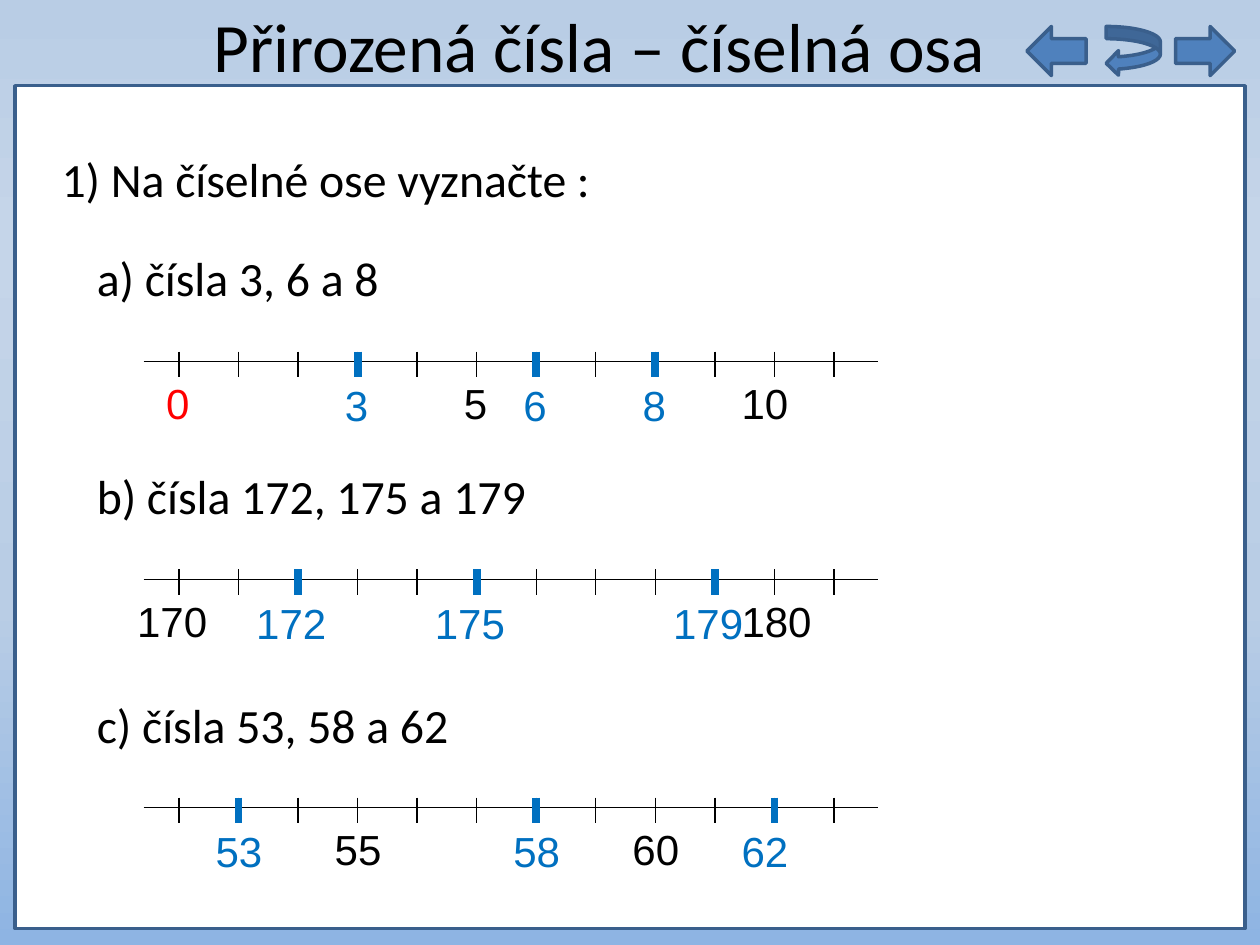
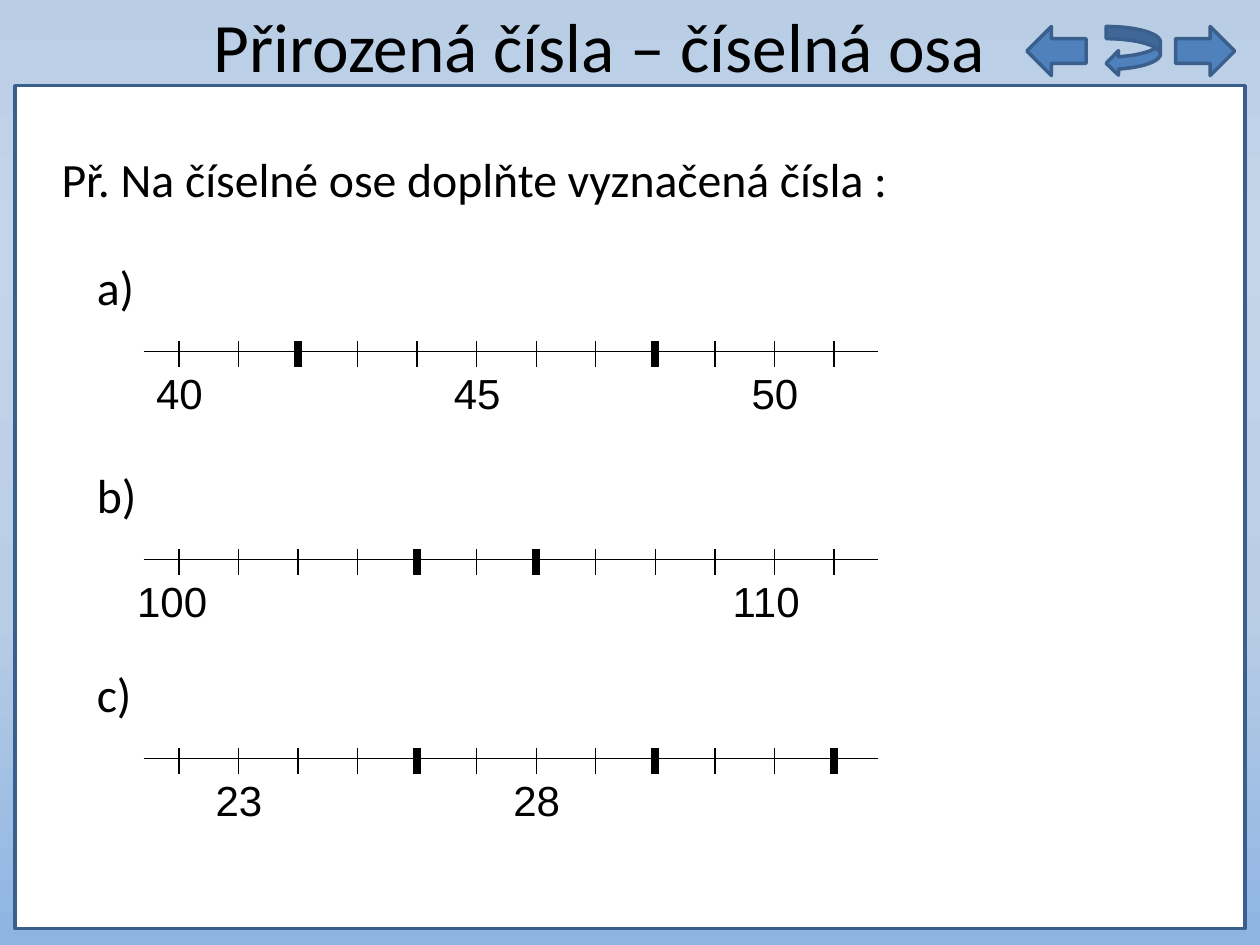
from copy import deepcopy
from dataclasses import dataclass

from lxml import etree
from pptx import Presentation
from pptx.dml.color import RGBColor
from pptx.enum.shapes import MSO_CONNECTOR, MSO_SHAPE
from pptx.enum.text import MSO_ANCHOR, PP_ALIGN
from pptx.oxml.ns import qn
from pptx.util import Inches, Pt

STRAIGHT = MSO_CONNECTOR.STRAIGHT
RECTANGLE = MSO_SHAPE.RECTANGLE
LEFT_ARROW = MSO_SHAPE.LEFT_ARROW
RIGHT_ARROW = MSO_SHAPE.RIGHT_ARROW
RETURN_ARROW = MSO_SHAPE.CURVED_LEFT_ARROW
TOP = MSO_ANCHOR.TOP
MIDDLE = MSO_ANCHOR.MIDDLE
LEFT = PP_ALIGN.LEFT
CENTER = PP_ALIGN.CENTER

BLACK = "000000"
WHITE = "FFFFFF"
RED = "FF0000"
ANSWER_BLUE = "0070C0"
ARROW_BLUE = "4F81BD"
OUTLINE_BLUE = "3A5F8C"
BACKGROUND_STOPS = [(0, "B9CDE5"), (0.25, "C5D5E9"), (0.64, "B9CDE5"), (1, "8EB4E3")]

TITLE = "Přirozená čísla – číselná osa"
TITLE_FONT = "Calibri"
NUMBER_FONT = "Arial"

AXIS_LEFT = 1.14
AXIS_WIDTH = 5.83
FIRST_TICK = 0.28
TICK_COUNT = 12
TICK_GAP = 5.2 / (TICK_COUNT - 1)
TICK_RISE = 0.08
TICK_HEIGHT = 0.2
THIN = 0.75
THICK = 4.5
LABEL_OFFSETS = {1: 0.2, 2: 0.28, 3: 0.43}
LABEL_WIDTHS = {1: 0.39, 2: 0.63, 3: 0.86}
TENTH_TICK = 10
TENTH_OFFSET = 0.36


@dataclass
class NumberLine:
    caption: str
    top: float
    first: int
    labels: tuple
    unknowns: tuple = ()
    answers: tuple = ()


def color(value):
    return RGBColor.from_string(value)


def add_text(slide, text, box, size, font, fill=BLACK, align=LEFT, anchor=MIDDLE):
    shape = slide.shapes.add_textbox(*map(Inches, box))
    text_frame = shape.text_frame
    text_frame.word_wrap = True
    text_frame.vertical_anchor = anchor
    text_frame.text = text
    paragraph = text_frame.paragraphs[0]
    paragraph.alignment = align
    run_font = paragraph.runs[0].font
    run_font.size = Pt(size)
    run_font.name = font
    run_font.color.rgb = color(fill)
    return paragraph


def add_block(slide, kind, box, fill):
    shape = slide.shapes.add_shape(kind, *map(Inches, box))
    shape.shadow.inherit = False
    shape.fill.solid()
    shape.fill.fore_color.rgb = color(fill)
    shape.line.color.rgb = color(OUTLINE_BLUE)
    shape.line.width = Pt(2)


def add_line(slide, start, end, width=THIN, stroke=BLACK):
    connector = slide.shapes.add_connector(STRAIGHT, *map(Inches, (*start, *end)))
    connector.line.width = Pt(width)
    connector.line.color.rgb = color(stroke)
    etree.SubElement(connector._element.spPr, qn("a:effectLst"))


def set_background(master):
    fill = master.background.fill
    fill.gradient()
    fill.gradient_angle = 270
    stop_list = master._element.find(".//" + qn("a:gsLst"))
    while len(stop_list) < len(BACKGROUND_STOPS):
        stop_list.append(deepcopy(stop_list[0]))
    for stop, (position, value) in zip(fill.gradient_stops, BACKGROUND_STOPS):
        stop.position = position
        stop.color.rgb = color(value)


def add_navigation(slide, left, top):
    height = 0.39
    add_block(slide, LEFT_ARROW, (left, top, 0.47, height), ARROW_BLUE)
    add_block(slide, RETURN_ARROW, (left + 0.63, top, 0.43, height), ARROW_BLUE)
    add_block(slide, RIGHT_ARROW, (left + 1.18, top, 0.47, height), ARROW_BLUE)


def add_tick(slide, x, axis_top, width=THIN, stroke=BLACK):
    top = axis_top - TICK_RISE
    add_line(slide, (x, top), (x, top + TICK_HEIGHT), width, stroke)


def add_label(slide, value, x, top, fill, offset):
    digits = len(str(value))
    box = (x - offset, top, LABEL_WIDTHS[digits], 0.47)
    paragraph = add_text(slide, str(value), box, 24, NUMBER_FONT, fill, anchor=TOP)
    paragraph.space_before = Pt(2)


def add_number_line(slide, number_line, left, width, caption_gap):
    top = number_line.top

    def tick_x(value):
        return left + FIRST_TICK + (value - number_line.first) * TICK_GAP

    def label_offset(value):
        if number_line.answers and value - number_line.first == TENTH_TICK:
            return TENTH_OFFSET
        return LABEL_OFFSETS[len(str(value))]

    caption_box = (left - 0.47, top - caption_gap, 7.17, 0.55)
    add_text(slide, number_line.caption, caption_box, 27.3, TITLE_FONT)
    add_line(slide, (left, top), (left + width, top))
    for value in range(number_line.first, number_line.first + TICK_COUNT):
        add_tick(slide, tick_x(value), top, THICK if value in number_line.unknowns else THIN)
    for value in number_line.labels:
        fill = RED if value == 0 else BLACK
        add_label(slide, value, tick_x(value), top + 0.08, fill, label_offset(value))
    for value in number_line.answers:
        add_tick(slide, tick_x(value), top, THICK, ANSWER_BLUE)
        add_label(slide, value, tick_x(value), top + 0.09, ANSWER_BLUE, label_offset(value))


def add_exercise_slide(presentation, task, number_lines, caption_gap):
    slide = presentation.slides.add_slide(presentation.slide_layouts[6])
    add_block(slide, RECTANGLE, (0.12, 0.68, 9.76, 6.69), WHITE)
    add_text(slide, TITLE, (0.5, -0.03, 8.52, 0.77), 39.6, TITLE_FONT, align=CENTER)
    add_text(slide, task, (0.39, 1.14, 7.17, 0.55), 27.3, TITLE_FONT)
    for number_line in number_lines:
        add_number_line(slide, number_line, AXIS_LEFT, AXIS_WIDTH, caption_gap)
    add_navigation(slide, 8.15, 0.21)


def main():
    presentation = Presentation()
    presentation.slide_width = Inches(10)
    presentation.slide_height = Inches(7.5)
    set_background(presentation.slide_master)

    add_exercise_slide(presentation, "1) Na číselné ose vyznačte :", [
        NumberLine("a) čísla 3, 6 a 8", 2.87, 0, (0, 5, 10), answers=(3, 6, 8)),
        NumberLine("b) čísla 172, 175 a 179", 4.6, 170, (170, 180), answers=(172, 175, 179)),
        NumberLine("c) čísla 53, 58 a 62", 6.41, 52, (55, 60), answers=(53, 58, 62)),
    ], caption_gap=0.94)
    add_exercise_slide(presentation, "Př. Na číselné ose doplňte vyznačená čísla :", [
        NumberLine("a)", 2.79, 40, (40, 45, 50), unknowns=(42, 48)),
        NumberLine("b)", 4.44, 100, (100, 110), unknowns=(104, 106)),
        NumberLine("c)", 6.02, 22, (23, 28), unknowns=(26, 30, 33)),
    ], caption_gap=0.79)

    presentation.save("out.pptx")


if __name__ == "__main__":
    main()
